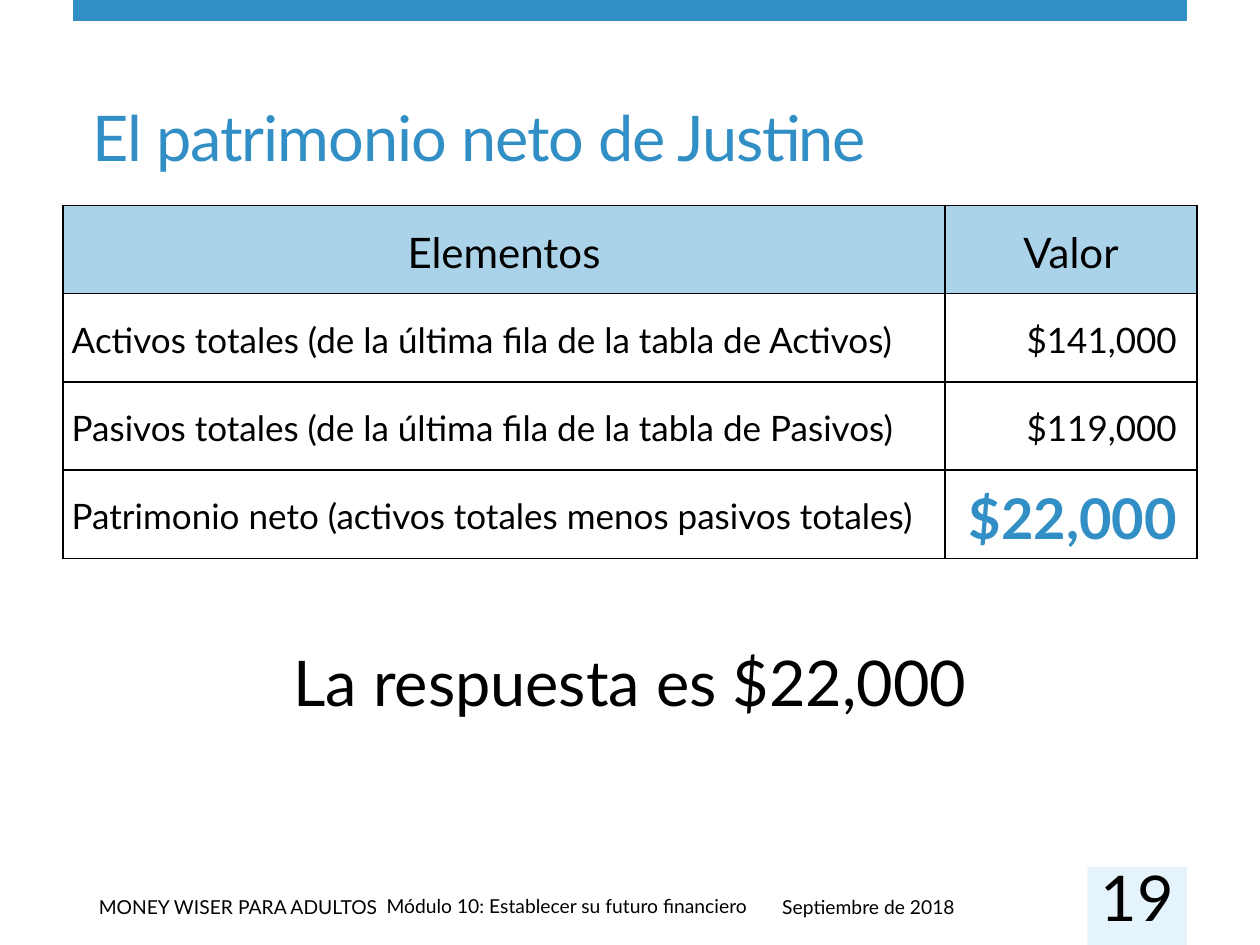
from dataclasses import dataclass

from lxml import etree
from pptx import Presentation
from pptx.dml.color import RGBColor
from pptx.enum.shapes import MSO_SHAPE
from pptx.enum.text import MSO_ANCHOR, MSO_AUTO_SIZE, PP_ALIGN
from pptx.oxml.ns import qn
from pptx.util import Pt

LEFT, CENTER, RIGHT = PP_ALIGN.LEFT, PP_ALIGN.CENTER, PP_ALIGN.RIGHT
TOP, MIDDLE, BOTTOM = MSO_ANCHOR.TOP, MSO_ANCHOR.MIDDLE, MSO_ANCHOR.BOTTOM
RECTANGLE, FIXED = MSO_SHAPE.RECTANGLE, MSO_AUTO_SIZE.NONE
TITLE_ONLY = 5


@dataclass(frozen=True)
class Theme:
    font: str = "Lato"
    accent: str = "318FC5"
    header: str = "AAD3EA"
    pale: str = "E4F3FC"
    ink: str = "000000"
    display: int = 36
    result: int = 32
    heading: int = 24
    cell: int = 20
    footer: int = 11


def apply(target, values):
    for name, value in values.items():
        setattr(target, name, value)


class PageBuilder:
    def __init__(self, theme, page):
        self.theme = theme
        self.page = page

    def add_span(self, frame, text, size, color=None, bold=False, **para_format):
        para = frame.paragraphs[0]
        apply(para, para_format)
        span = para.add_run()
        span.text = text
        apply(span.font, {"name": self.theme.font, "size": Pt(size), "bold": bold})
        span.font.color.rgb = RGBColor.from_string(color or self.theme.ink)
        return span

    def bar(self, left, top, width, height, color):
        shape = self.page.shapes.add_shape(
            RECTANGLE, Pt(left), Pt(top), Pt(width), Pt(height))
        shape.shadow.inherit = False
        shape.fill.solid()
        shape.fill.fore_color.rgb = RGBColor.from_string(color)
        shape.line.fill.background()

    def title(self, left, top, width, height, text):
        box = self.page.shapes.title
        apply(box, {"left": Pt(left), "top": Pt(top),
                    "width": Pt(width), "height": Pt(height)})
        apply(box.text_frame, {"vertical_anchor": BOTTOM, "word_wrap": True,
                               "auto_size": FIXED})
        span = self.add_span(box.text_frame, text, self.theme.display,
                             self.theme.accent, alignment=LEFT)
        span.font._element.set("spc", "-60")

    def text(self, left, top, width, height, text, size,
             align=LEFT, anchor=TOP, inset=None):
        box = self.page.shapes.add_textbox(Pt(left), Pt(top), Pt(width), Pt(height))
        frame = box.text_frame
        apply(frame, {"word_wrap": True, "auto_size": FIXED, "vertical_anchor": anchor})
        if inset is not None:
            sides = ("left", "top", "right", "bottom")
            apply(frame, {f"margin_{side}": Pt(inset) for side in sides})
        self.add_span(frame, text, size, alignment=align)

    def borders(self, cell):
        properties = cell._tc.get_or_add_tcPr()
        for index, side in enumerate(("lnL", "lnR", "lnT", "lnB")):
            line = etree.Element(qn(f"a:{side}"), w=str(Pt(1)))
            fill = etree.SubElement(line, qn("a:solidFill"))
            etree.SubElement(fill, qn("a:srgbClr"), val=self.theme.ink)
            properties.insert(index, line)

    def table(self, left, top, widths, row_height, rows):
        theme = self.theme
        table = self.page.shapes.add_table(
            len(rows), len(widths), Pt(left), Pt(top),
            Pt(sum(widths)), Pt(row_height * len(rows))).table
        for column, width in zip(table.columns, widths):
            column.width = Pt(width)
        for r, values in enumerate(rows):
            table.rows[r].height = Pt(row_height)
            for c, value in enumerate(values):
                cell = table.cell(r, c)
                is_header = r == 0
                is_amount = c == 1 and not is_header
                is_result = is_amount and r == len(rows) - 1
                apply(cell, {"vertical_anchor": MIDDLE, "margin_left": Pt(5),
                             "margin_right": Pt(11.5 if is_amount else 5),
                             "margin_top": 0, "margin_bottom": 0})
                if is_header:
                    cell.fill.solid()
                    cell.fill.fore_color.rgb = RGBColor.from_string(theme.header)
                else:
                    cell.fill.background()
                self.borders(cell)
                size = (theme.heading if is_header
                        else theme.result if is_result else theme.cell)
                self.add_span(
                    cell.text_frame, value, size,
                    theme.accent if is_result else theme.ink, is_result,
                    alignment=CENTER if is_header else RIGHT if is_amount else LEFT,
                    line_spacing=1.1, space_after=Pt(0 if is_amount else 12))


def main():
    theme = Theme()
    deck = Presentation()
    apply(deck, {"slide_width": Pt(720), "slide_height": Pt(540)})
    builder = PageBuilder(theme, deck.slides.add_slide(deck.slide_layouts[TITLE_ONLY]))

    # Top band and title
    builder.bar(41.8, 0, 636.5, 12, theme.accent)
    builder.title(45.4, 33.8, 590.4, 69.1, "El patrimonio neto de Justine")

    # Net worth table
    builder.table(36, 117.4, (504, 144), 50.4, (
        ("Elementos", "Valor"),
        ("Activos totales (de la última fila de la tabla de Activos)", "$141,000"),
        ("Pasivos totales (de la última fila de la tabla de Pasivos)", "$119,000"),
        ("Patrimonio neto (activos totales menos pasivos totales)", "$22,000"),
    ))

    # Answer
    builder.text(36, 364.3, 648, 79.2, "La respuesta es $22,000", theme.display, CENTER)

    # Footer
    for left, top, width, text in (
        (49.4, 508.3, 184.3, "MONEY WISER PARA ADULTOS"),
        (213.8, 507.6, 226, "Módulo 10: Establecer su futuro financiero"),
        (439.9, 508.3, 181.4, "Septiembre de 2018"),
    ):
        builder.text(left, top, width, 20.2, text, theme.footer)

    # Page number
    builder.bar(621.4, 495.4, 56.9, 44.6, theme.pale)
    builder.text(621.4, 501.1, 56.9, 22.3, "19", theme.display, CENTER, MIDDLE, 0)

    deck.save("out.pptx")


if __name__ == "__main__":
    main()
